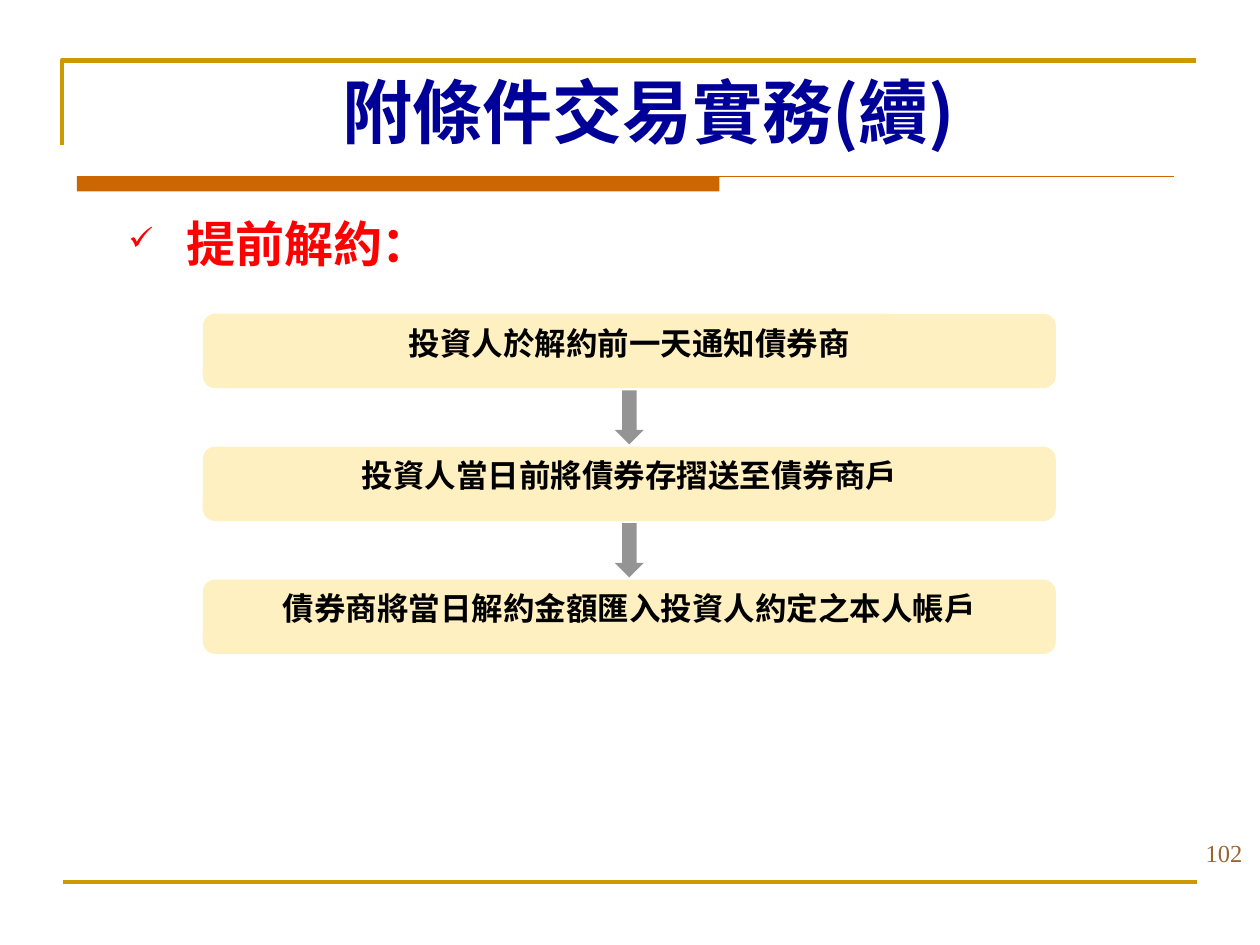
"""Build the slide on early termination of repurchase trades."""
from lxml.etree import SubElement
from pptx import Presentation
from pptx.dml.color import RGBColor
from pptx.enum.shapes import MSO_CONNECTOR as Connector, MSO_SHAPE as Shape
from pptx.enum.text import MSO_ANCHOR as Anchor, PP_ALIGN as Align
from pptx.oxml.ns import qn
from pptx.util import Inches, Pt

TITLE = "附條件交易實務(續)"
HEADING = "提前解約："
STEPS = [
    "投資人於解約前一天通知債券商",
    "投資人當日前將債券存摺送至債券商戶",
    "債券商將當日解約金額匯入投資人約定之本人帳戶",
]
PAGE_NUMBER = "102"
SANS, SERIF = "Noto Sans CJK SC", "Times New Roman"
GOLD, ORANGE, CREAM = "CC9900", "CC6600", "FFF0C2"
WIDTH, HEIGHT = 10, 7.5
STEP_LEFT, STEP_TOP, STEP_WIDTH, STEP_HEIGHT = 1.61, 2.49, 6.77, 0.59
STEP_PITCH = 1.055
ARROW_WIDTH, ARROW_HEIGHT = 0.23, 0.43


def color(value):
    return RGBColor.from_string(value)


def write(box, text, size, fill, font=SANS, bold=True, align=Align.CENTER, anchor=Anchor.TOP):
    frame = box.text_frame
    frame.word_wrap = True
    frame.vertical_anchor = anchor
    frame.margin_top = frame.margin_bottom = Inches(0.05)
    para = frame.paragraphs[0]
    para.alignment = align
    span = para.add_run()
    span.text = text
    span.font.size, span.font.bold, span.font.name = Pt(size), bold, font
    span.font.color.rgb = color(fill)
    SubElement(span.font._element, qn("a:ea"), typeface=SANS)
    return para


def add_text(page, area, text, size, fill, **style):
    box = page.shapes.add_textbox(*map(Inches, area))
    return box, write(box, text, size, fill, **style)


def add_block(page, kind, area, fill, alpha=None):
    block = page.shapes.add_shape(kind, *map(Inches, area))
    block.shadow.inherit = False
    block.fill.solid()
    block.fill.fore_color.rgb = color(fill)
    block.line.fill.background()
    if alpha:
        tint = block.fill._xPr.find(".//" + qn("a:srgbClr"))
        SubElement(tint, qn("a:alpha"), val=str(alpha * 1000))
    return block


def add_rule(page, left, right, top, fill, weight):
    ends = map(Inches, (left, top, right, top))
    rule = page.shapes.add_connector(Connector.STRAIGHT, *ends)
    rule.line.color.rgb = color(fill)
    rule.line.width = Pt(weight)
    SubElement(rule._element.spPr, qn("a:effectLst"))


def add_corner(page):
    builder = page.shapes.build_freeform(Inches(0.49), Inches(1.15))
    turns = [(Inches(0.49), Inches(0.48)), (Inches(9.49), Inches(0.48))]
    builder.add_line_segments(turns, close=False)
    corner = builder.convert_to_shape()
    corner.shadow.inherit = False
    corner.fill.background()
    corner.line.color.rgb = color(GOLD)
    corner.line.width = Pt(2.5)


def add_heading(page):
    para = add_text(page, (0.59, 1.7, 8.74, 4.67), HEADING, 28, "FF0000",
                    font=SERIF, align=Align.LEFT)[1]
    para.line_spacing = 0.9
    para.space_before = Pt(6)
    props = para._p.get_or_add_pPr()
    props.set("marL", str(Inches(0.79)))
    props.set("indent", str(Inches(-0.46)))
    SubElement(props, qn("a:buSzPct"), val="65000")
    SubElement(props, qn("a:buChar"), char="✓")


def add_flow(page):
    center = STEP_LEFT + STEP_WIDTH / 2
    gap = STEP_PITCH - STEP_HEIGHT
    for row, text in enumerate(STEPS):
        top = STEP_TOP + row * STEP_PITCH
        area = (STEP_LEFT, top, STEP_WIDTH, STEP_HEIGHT)
        step = add_block(page, Shape.ROUNDED_RECTANGLE, area, CREAM)
        write(step, text, 18, "000000")
        if row:
            area = (center - ARROW_WIDTH / 2, top - (gap + ARROW_HEIGHT) / 2,
                    ARROW_WIDTH, ARROW_HEIGHT)
            add_block(page, Shape.DOWN_ARROW, area, "000000", alpha=42)


def main():
    deck = Presentation()
    deck.slide_width, deck.slide_height = Inches(WIDTH), Inches(HEIGHT)
    page = deck.slides.add_slide(deck.slide_layouts[6])
    add_corner(page)
    add_rule(page, 0.5, 9.5, 7, GOLD, 2)
    add_heading(page)
    add_text(page, (7.63, 6.43, 2.33, 0.5), PAGE_NUMBER, 14, "996633",
             font=SERIF, bold=False, align=Align.RIGHT, anchor=Anchor.BOTTOM)
    add_flow(page)
    title = add_text(page, (0.65, 0.51, 9, 0.94), TITLE, 40, "000099", anchor=Anchor.MIDDLE)[0]
    title.text_frame.margin_top, title.text_frame.margin_bottom = 0, Inches(0.2)
    add_block(page, Shape.RECTANGLE, (0.61, 1.4, 5.1, 0.12), ORANGE)
    add_rule(page, 0.61, 9.32, 1.4, ORANGE, 0.75)
    deck.save("out.pptx")


if __name__ == "__main__":
    main()
